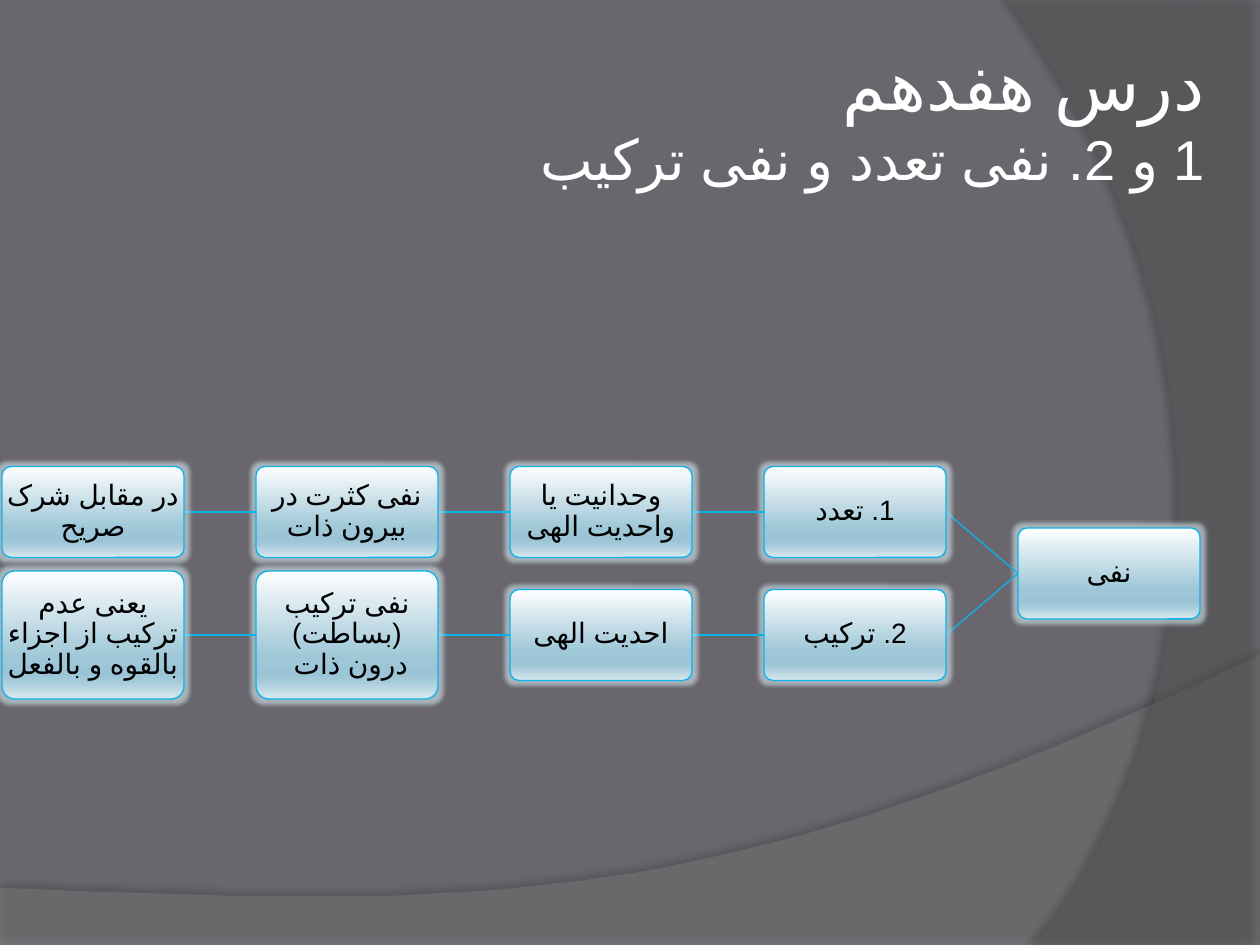
from lxml.etree import SubElement
from pptx import Presentation
from pptx.dml.color import RGBColor
from pptx.enum.shapes import MSO_CONNECTOR, MSO_SHAPE
from pptx.enum.text import MSO_ANCHOR, MSO_AUTO_SIZE, PP_ALIGN
from pptx.oxml import parse_xml
from pptx.oxml.ns import nsdecls, qn
from pptx.util import Pt

SCALE = 914400 / 126
WIDTH, HEIGHT = 1260, 945
BORDER = "0AB3EC"
GLOW = "D3E6EE"
BOX_STOPS = [(0, "FEFEFF"), (68, "9EC7D7"), (81, "9BC5D6"),
             (86, "A5CAD9"), (100, "DAE8EE")]
BRANCHES = [
    ["1. تعدد", "وحدانیت یا واحدیت الهی", "نفی کثرت در بیرون ذات",
     "در مقابل شرک صریح"],
    ["2. ترکیب", "احدیت الهی", "نفی ترکیب (بساطت) درون ذات ",
     "یعنی عدم ترکیب از اجزاء بالقوه و بالفعل"],
]


def px(value):
    return round(value * SCALE)


def color(value):
    return RGBColor.from_string(value)


def add_effect(shape, effect):
    """Give a shape one effect, written as XML."""
    properties = shape._element.spPr
    for old in properties.findall(qn("a:effectLst")):
        properties.remove(old)
    properties.append(parse_xml(
        f'<a:effectLst {nsdecls("a")}>{effect}</a:effectLst>'))


def color_xml(value, alpha):
    return f'<a:srgbClr val="{value}"><a:alpha val="{alpha * 1000}"/></a:srgbClr>'


def add_glow(shape):
    add_effect(shape, f'<a:glow rad="{Pt(5)}">{color_xml(GLOW, 60)}</a:glow>')


def set_persian(paragraph):
    """Right-to-left paragraph with a font for the Arabic script."""
    paragraph._p.get_or_add_pPr().set("rtl", "1")
    for run in paragraph.runs:
        properties = run._r.get_or_add_rPr()
        properties.set("lang", "fa-IR")
        SubElement(properties, qn("a:cs"), typeface="Arial")


def curve(start, control_1, control_2, end, steps=40):
    """Points along a cubic curve."""
    for step in range(steps + 1):
        t = step / steps
        weights = ((1 - t) ** 3, 3 * t * (1 - t) ** 2, 3 * t * t * (1 - t), t ** 3)
        corners = (start, control_1, control_2, end)
        yield tuple(sum(w * corner[axis] for w, corner in zip(weights, corners))
                    for axis in (0, 1))


def add_wave(slide, points, fill, opacity, shadow):
    """Translucent background area; shadow is (opacity, distance, angle)."""
    builder = slide.shapes.build_freeform(*points[0], scale=SCALE)
    builder.add_line_segments(points[1:])
    shape = builder.convert_to_shape()
    shape.fill.solid()
    shape.fill.fore_color.rgb = color(fill)
    SubElement(shape._element.spPr.find(".//" + qn("a:srgbClr")),
               qn("a:alpha"), val=str(opacity * 1000))
    shape.line.fill.background()
    shadow_opacity, distance, angle = shadow
    add_effect(shape, f'<a:outerShdw blurRad="{Pt(4)}" dist="{Pt(distance)}" '
                      f'dir="{angle * 60000}" algn="ctr" rotWithShape="0">'
                      f'{color_xml("000000", shadow_opacity)}</a:outerShdw>')


def add_background(slide, width, height):
    slide.background.fill.solid()
    slide.background.fill.fore_color.rgb = color("69676D")
    # Bottom wave
    add_wave(slide, [(0, height), (width, height),
                     *curve((width, 655), (704, 919), (493, 906), (0, 888))],
             "7F7F7F", 45, (35, 3.5, 270))
    # Right arc
    add_wave(slide, [(width, 2), (width, height),
                     *curve((1034, height), (1178, 780), (1283, 378), (1008, 0))],
             "5E5E5E", 40, (45, 4, 180))


def add_title(slide, left, top, width, height):
    title = slide.shapes.title
    title.left, title.top = px(left), px(top)
    title.width, title.height = px(width), px(height)
    frame = title.text_frame
    frame.auto_size = MSO_AUTO_SIZE.NONE
    frame.vertical_anchor = MSO_ANCHOR.MIDDLE
    frame.margin_left = frame.margin_right = px(6)
    frame.margin_top = frame.margin_bottom = px(6)
    frame.text = "درس هفدهم\v1 و 2. نفی تعدد و نفی ترکیب"
    paragraph = frame.paragraphs[0]
    paragraph.alignment = PP_ALIGN.RIGHT
    for run, size in zip(paragraph.runs, (40, 32)):
        run.font.size = Pt(size)
        run.font.name = "Cabin"
        run.font.color.rgb = color("FFFFFF")
    set_persian(paragraph)
    # Bring the title in front of the background areas
    title._element.getparent().append(title._element)


def add_box(slide, text, left, middle, width, height):
    box = slide.shapes.add_shape(MSO_SHAPE.ROUNDED_RECTANGLE, px(left),
                                 px(middle - height / 2), px(width), px(height))
    box.adjustments[0] = 0.1
    # Five-stop vertical gradient
    box.fill.gradient()
    box.fill.gradient_angle = 270
    stops = box._element.spPr.find(".//" + qn("a:gsLst"))
    for old in list(stops):
        stops.remove(old)
    for position, value in BOX_STOPS:
        stop = SubElement(stops, qn("a:gs"), pos=str(position * 1000))
        SubElement(stop, qn("a:srgbClr"), val=value)
    box.line.color.rgb = color(BORDER)
    box.line.width = Pt(0.75)
    add_glow(box)
    # Label
    frame = box.text_frame
    frame.word_wrap = True
    frame.vertical_anchor = MSO_ANCHOR.MIDDLE
    frame.margin_left = frame.margin_right = px(1)
    frame.margin_top = frame.margin_bottom = px(1)
    frame.text = text
    paragraph = frame.paragraphs[0]
    paragraph.alignment = PP_ALIGN.CENTER
    paragraph.line_spacing = 0.9
    paragraph.font.size = Pt(16)
    paragraph.font.name = "Arial"
    paragraph.font.color.rgb = color("000000")
    set_persian(paragraph)


def add_link(slide, *ends):
    link = slide.shapes.add_connector(MSO_CONNECTOR.STRAIGHT, *map(px, ends))
    link.line.color.rgb = color(BORDER)
    link.line.width = Pt(0.75)
    add_glow(link)


def add_tree(slide, left, first_middle, width):
    """Right-to-left tree: a root and two rows of boxes."""
    box_width, box_height, tall_height = 182, 91, 128
    gap, row_pitch = 72, 123
    root_left = left + width - box_width
    root_middle = first_middle + row_pitch / 2
    add_box(slide, "نفی", root_left, root_middle, box_width, box_height)
    for row, labels in enumerate(BRANCHES):
        middle = first_middle + row * row_pitch
        parent_left, parent_middle = root_left, root_middle
        for column, label in enumerate(labels):
            box_left = parent_left - gap - box_width
            add_link(slide, parent_left, parent_middle, box_left + box_width, middle)
            is_tall = row == 1 and column >= 2
            add_box(slide, label, box_left, middle, box_width,
                    tall_height if is_tall else box_height)
            parent_left, parent_middle = box_left, middle


def main():
    presentation = Presentation()
    presentation.slide_width, presentation.slide_height = px(WIDTH), px(HEIGHT)
    slide = presentation.slides.add_slide(presentation.slide_layouts[5])
    add_background(slide, WIDTH, HEIGHT)
    add_title(slide, 181, 38, 1030, 157)
    add_tree(slide, 1, 512, 1199)
    presentation.save("out.pptx")


if __name__ == "__main__":
    main()
